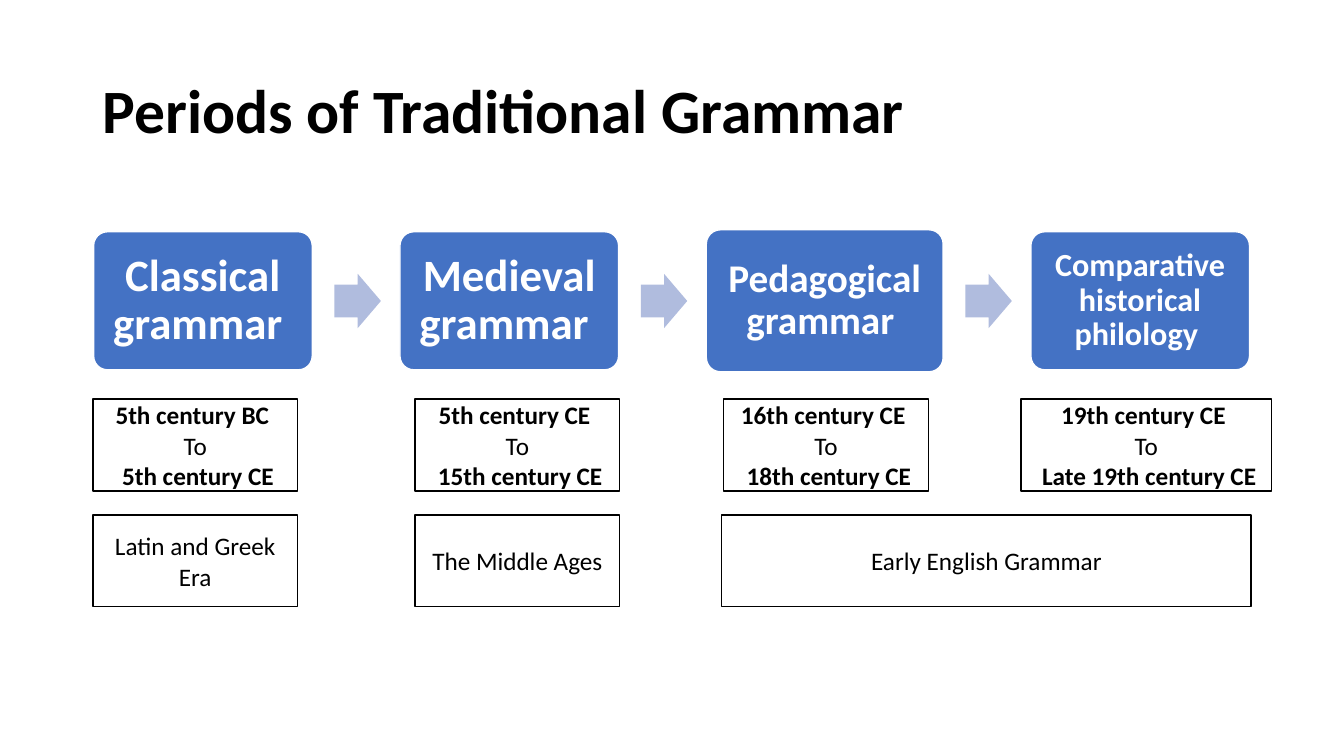
import pptx
import pptx.util
import pptx.dml.color
import pptx.enum.shapes
import pptx.enum.text

Cm = pptx.util.Cm
Shape = pptx.enum.shapes.MSO_SHAPE
Align = pptx.enum.text.PP_ALIGN


def color(value):
    return pptx.dml.color.RGBColor.from_string(value)


def write_text(shape, lines, size=18, ink="000000", bold=(False,), align=Align.CENTER,
               spacing=1.0, inset=None):
    """Write one paragraph per line; bold holds one flag per line."""
    frame = shape.text_frame
    frame.word_wrap = True
    frame.vertical_anchor = pptx.enum.text.MSO_ANCHOR.MIDDLE
    if inset is not None:
        frame.margin_left = frame.margin_right = Cm(inset)
        frame.margin_top = frame.margin_bottom = Cm(inset)
    for index, (line, heavy) in enumerate(zip(lines, bold)):
        paragraph = frame.add_paragraph() if index else frame.paragraphs[0]
        paragraph.alignment = align
        paragraph.line_spacing = spacing
        run = paragraph.add_run()
        run.text = line
        run.font.name = "Calibri"
        run.font.size = pptx.util.Pt(size)
        run.font.bold = heavy
        run.font.color.rgb = color(ink)


class TimelineSlide:
    blue, pale, white, black = "4472C4", "B0BCDE", "FFFFFF", "000000"
    middle = 7.58  # vertical centre of the period row

    def __init__(self, presentation):
        self.slide = presentation.slides.add_slide(presentation.slide_layouts[5])

    def title(self, text):
        title = self.slide.shapes.title
        title.left, title.top, title.width, title.height = Cm(2.33), Cm(1.01), Cm(29.21), Cm(3.68)
        write_text(title, [text], size=44, bold=[True], align=Align.LEFT, spacing=0.9)

    def shape(self, kind, left, top, width, height, fill, line=None):
        shape = self.slide.shapes.add_shape(kind, Cm(left), Cm(top), Cm(width), Cm(height))
        shape.shadow.inherit = False
        shape.fill.solid()
        shape.fill.fore_color.rgb = color(fill)
        if line:
            shape.line.color.rgb = color(line)
            shape.line.width = pptx.util.Pt(1)
        else:
            shape.line.fill.background()
        return shape

    def period(self, left, width, height, name, size, inset):
        shape = self.shape(Shape.ROUNDED_RECTANGLE, left, self.middle - height / 2,
                           width, height, self.blue, self.white)
        shape.adjustments[0] = 0.1
        write_text(shape, [name], size=size, ink=self.white, bold=[True], spacing=0.9, inset=inset)

    def arrow(self, left):
        arrow = self.shape(Shape.RIGHT_ARROW, left, self.middle - 0.68, 1.17, 1.37, self.pale)
        arrow.adjustments[0] = 0.6
        arrow.adjustments[1] = 0.5

    def box(self, left, top, width, lines, bold=(False,)):
        shape = self.shape(Shape.RECTANGLE, left, top, width, 2.31, self.white, self.black)
        write_text(shape, lines, bold=bold)


def main():
    presentation = pptx.Presentation()
    presentation.slide_width, presentation.slide_height = Cm(33.87), Cm(19.05)
    timeline = TimelineSlide(presentation)
    timeline.title("Periods of Traditional Grammar")

    # Periods joined by arrows
    periods = [
        ("Classical grammar ", 5.51, 3.48, 32, 0.33),
        ("Medieval grammar ", 5.51, 3.48, 32, 0.33),
        ("Pedagogical grammar ", 5.97, 3.58, 28, 0.3),
        ("Comparative historical philology ", 5.51, 3.48, 23, 0.25),
    ]
    left = 2.36
    for index, (name, width, height, size, inset) in enumerate(periods):
        if index:
            timeline.arrow(left - 1.65)
        timeline.period(left, width, height, name, size, inset)
        left += width + 2.21

    # Dates
    dates = [
        (2.34, 5.16, "5th century BC ", " 5th century CE"),
        (10.46, 5.16, "5th century CE ", " 15th century CE"),
        (18.24, 5.16, "16th century CE ", " 18th century CE"),
        (25.73, 6.32, "19th century CE ", " Late 19th century CE"),
    ]
    for left, width, start, end in dates:
        timeline.box(left, 10.06, width, [start, "To", end], bold=[True, False, True])

    # Eras
    eras = [
        (2.34, 5.16, "Latin and Greek Era"),
        (10.46, 5.16, "The Middle Ages"),
        (18.19, 13.34, "Early English Grammar"),
    ]
    for left, width, era in eras:
        timeline.box(left, 12.98, width, [era])

    presentation.save("out.pptx")


if __name__ == "__main__":
    main()
